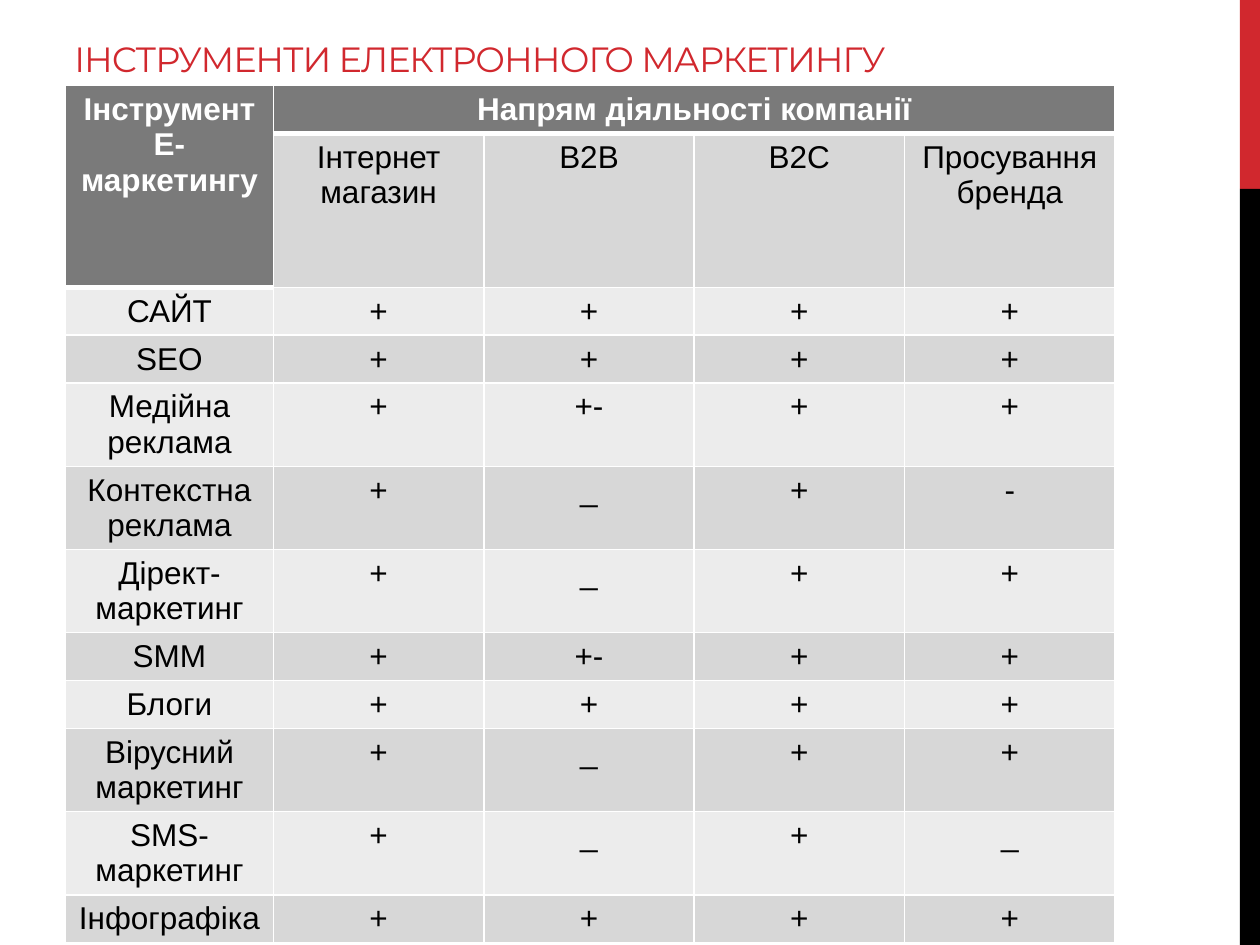
from lxml import etree
from pptx import Presentation
from pptx import util as u
from pptx.dml.color import RGBColor
from pptx.enum import shapes, text
from pptx.oxml.ns import qn

RED, BLACK, WHITE = "D1282E", "000000", "FFFFFF"
HEAD, DARK, LIGHT = "7A7A7A", "D7D7D7", "ECECEC"

COMPANY_TYPES = ["Інтернет магазин", "В2В", "В2С", "Просування\nбренда"]
TOOLS = [
    ("САЙТ", "+ + + +"),
    ("SEO", "+ + + +"),
    ("Медійна реклама", "+ +- + +"),
    ("Контекстна реклама", "+ _ + -"),
    ("Дірект-маркетинг", "+ _ + +"),
    ("SMM", "+ +- + +"),
    ("Блоги", "+ + + +"),
    ("Вірусний маркетинг", "+ _ + +"),
    ("SMS-маркетинг", "+ _ + _"),
    ("Інфографіка", "+ + + +"),
]
TWO_LINE_TOOLS = {name for name, marks in TOOLS if "маркетинг" in name or "реклама" in name}


def color(value):
    return RGBColor.from_string(value)


class SlideBuilder:
    def __init__(self, page):
        self.page = page
        self.body_font = "Arial"
        self.title_font = "Montserrat"

    def title(self, words, left, top, width, height):
        box = self.page.shapes.title
        box.left, box.top = u.Inches(left), u.Inches(top)
        box.width, box.height = u.Inches(width), u.Inches(height)
        frame = box.text_frame
        frame.text = words
        frame.word_wrap = True
        frame.auto_size = text.MSO_AUTO_SIZE.NONE
        frame.vertical_anchor = text.MSO_ANCHOR.BOTTOM
        para = frame.paragraphs[0]
        para.alignment = text.PP_ALIGN.LEFT
        self.style(para.font, self.title_font, 20, RED, False)
        para.runs[0].font._element.set("spc", "-60")

    def bar(self, left, top, width, height, fill):
        bar = self.page.shapes.add_shape(
            shapes.MSO_SHAPE.RECTANGLE, u.Inches(left), u.Inches(top),
            u.Inches(width), u.Inches(height))
        bar.shadow.inherit = False
        bar.fill.solid()
        bar.fill.fore_color.rgb = color(fill)
        bar.line.fill.background()

    def table(self, left, top, widths, heights):
        table = self.page.shapes.add_table(
            len(heights), len(widths), u.Inches(left), u.Inches(top),
            u.Inches(sum(widths)), u.Inches(sum(heights))).table
        for column, width in zip(table.columns, widths):
            column.width = u.Inches(width)
        for row, height in zip(table.rows, heights):
            row.height = u.Inches(height)
        return table

    def cell(self, cell, words, fill, header=False):
        self.borders(cell, 3 if header else 1)
        cell.fill.solid()
        cell.fill.fore_color.rgb = color(fill)
        cell.text = words
        for para in cell.text_frame.paragraphs:
            para.alignment = text.PP_ALIGN.CENTER
            self.style(para.font, self.body_font, 18, WHITE if header else BLACK, header)

    def borders(self, cell, bottom):
        properties = cell._tc.get_or_add_tcPr()
        for side, points in (("lnL", 1), ("lnR", 1), ("lnT", 1), ("lnB", bottom)):
            line = etree.SubElement(properties, qn(f"a:{side}"), w=str(u.Pt(points)))
            solid = etree.SubElement(line, qn("a:solidFill"))
            etree.SubElement(solid, qn("a:srgbClr"), val=WHITE)

    def style(self, font, name, size, ink, bold):
        font.name = name
        font.size = u.Pt(size)
        font.color.rgb = color(ink)
        font.bold = bold


def main():
    deck = Presentation()
    deck.slide_width, deck.slide_height = u.Inches(10), u.Inches(7.5)
    page = deck.slides.add_slide(deck.slide_layouts[5])
    builder = SlideBuilder(page)

    builder.bar(9.84, 0, 0.16, 1.5, RED)
    builder.bar(9.84, 1.5, 0.16, 6, BLACK)
    builder.title("ІНСТРУМЕНТИ ЕЛЕКТРОННОГО МАРКЕТИНГУ", 0.49, 0.21, 7.18, 0.47)

    tool_heights = [0.66 if name in TWO_LINE_TOOLS else 0.38 for name, marks in TOOLS]
    table = builder.table(0.52, 0.68, [1.65] + [1.67] * 4, [0.38, 1.22] + tool_heights)

    table.cell(0, 0).merge(table.cell(1, 0))
    table.cell(0, 1).merge(table.cell(0, 4))
    builder.cell(table.cell(0, 0), "Інструмент\nЕ-маркетингу", HEAD, header=True)
    builder.cell(table.cell(0, 1), "Напрям діяльності компанії", HEAD, header=True)
    for column, name in enumerate(COMPANY_TYPES, 1):
        builder.cell(table.cell(1, column), name, DARK)
    for row, (name, marks) in enumerate(TOOLS, 2):
        for column, words in enumerate([name] + marks.split()):
            builder.cell(table.cell(row, column), words, DARK if row % 2 else LIGHT)

    deck.save("out.pptx")


if __name__ == "__main__":
    main()
